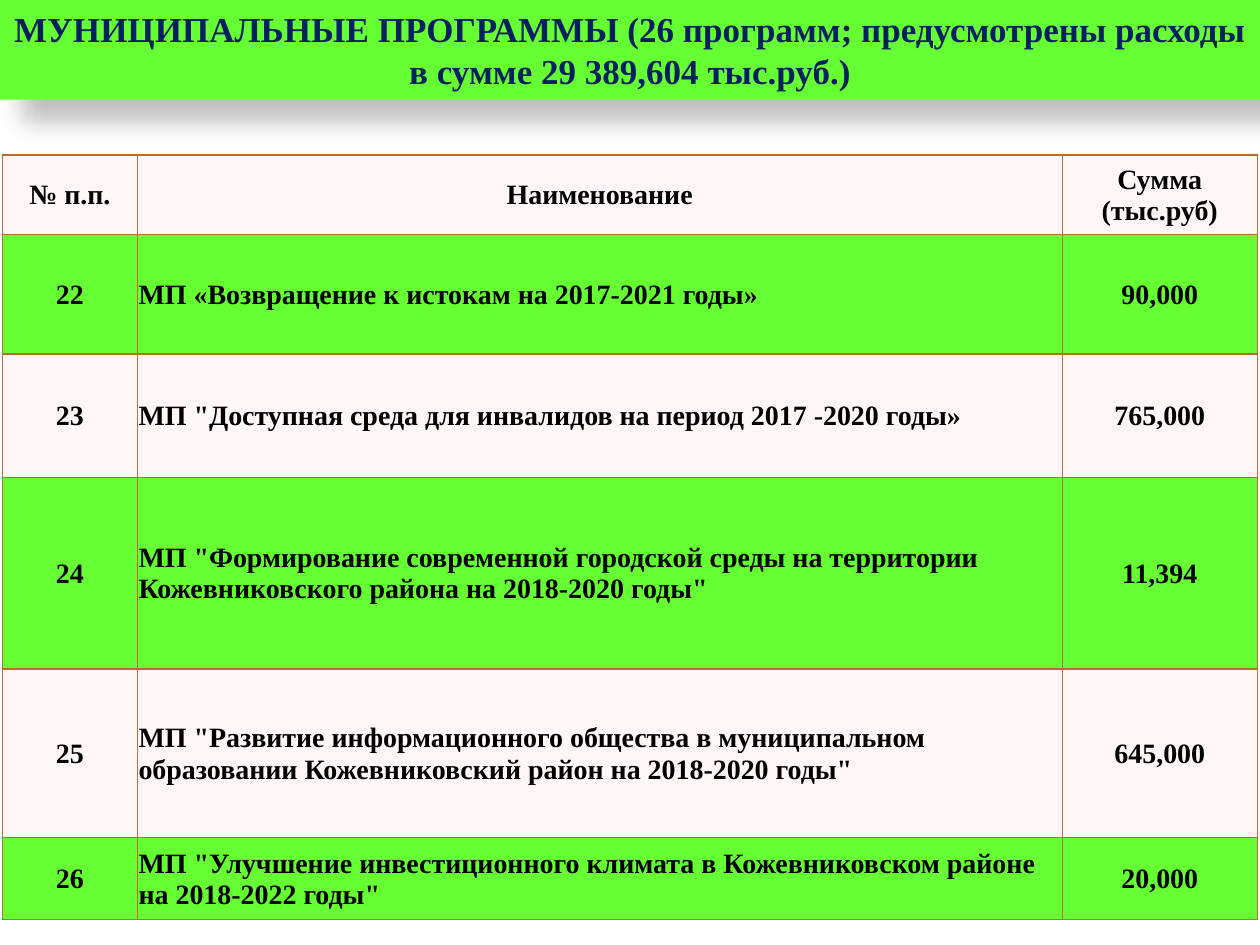
import pptx
import pptx.util
import pptx.dml.color
import pptx.enum.shapes
import pptx.enum.text
import pptx.oxml
import pptx.oxml.ns
from lxml import etree

Inches = pptx.util.Inches
Pt = pptx.util.Pt
ALIGN = pptx.enum.text.PP_ALIGN
MIDDLE = pptx.enum.text.MSO_ANCHOR.MIDDLE
COLORS = {"green": "66FF33", "pale": "FFF7F5", "border": "BA6C2C",
          "title": "002060", "text": "000000", "shadow": "000000"}
TITLE = ("МУНИЦИПАЛЬНЫЕ ПРОГРАММЫ (26 программ; предусмотрены расходы "
         "в сумме 29 389,604 тыс.руб.)")
COL_WIDTHS = [1.07, 7.34, 1.55]
ROW_HEIGHTS = [0.63, 0.95, 0.98, 1.52, 1.34, 0.65]
PROGRAMS = [
    ("№ п.п.", "Наименование", "Сумма (тыс.руб)"),
    ("22", "МП «Возвращение к истокам на 2017-2021 годы»", "90,000"),
    ("23", 'МП "Доступная среда для инвалидов на период 2017 -2020 годы»', "765,000"),
    ("24", 'МП "Формирование современной городской среды на территории '
           'Кожевниковского района на 2018-2020 годы"', "11,394"),
    ("25", 'МП "Развитие информационного общества в муниципальном '
           'образовании Кожевниковский район на 2018-2020 годы"', "645,000"),
    ("26", 'МП "Улучшение инвестиционного климата в Кожевниковском районе '
           'на 2018-2022 годы"', "20,000"),
]


def rgb(name):
    return pptx.dml.color.RGBColor.from_string(COLORS[name])


def fill(obj, color):
    obj.fill.solid()
    obj.fill.fore_color.rgb = rgb(color)


def write(tf, text, size, color, align):
    p = tf.paragraphs[0]
    p.alignment = align
    r = p.add_run()
    r.text = text
    font = {"name": "Times New Roman", "size": Pt(size), "bold": True}
    for key, value in font.items():
        setattr(r.font, key, value)
    r.font.color.rgb = rgb(color)


def add_shadow(sp):
    """Give the shape a soft shadow to the lower right."""
    sp.shadow.inherit = False
    effects = sp._element.spPr.find(pptx.oxml.ns.qn("a:effectLst"))
    effects.append(pptx.oxml.parse_xml(
        f'<a:outerShdw {pptx.oxml.ns.nsdecls("a")} blurRad="{Pt(15)}" dist="{Pt(18)}" '
        f'dir="2700000" algn="tl" rotWithShape="0"><a:srgbClr val="{COLORS["shadow"]}">'
        '<a:alpha val="26000"/></a:srgbClr></a:outerShdw>'))


def add_title(s):
    sp = s.shapes.add_shape(pptx.enum.shapes.MSO_SHAPE.RECTANGLE,
                            0, 0, Inches(10), Inches(0.79))
    fill(sp, "green")
    sp.line.fill.background()
    add_shadow(sp)
    sp.text_frame.word_wrap = True
    sp.text_frame.vertical_anchor = MIDDLE
    write(sp.text_frame, TITLE, 20, "title", ALIGN.CENTER)


def add_borders(cell):
    tc_pr = cell._tc.get_or_add_tcPr()
    for i, side in enumerate(("lnL", "lnR", "lnT", "lnB")):
        ln = etree.Element(pptx.oxml.ns.qn(f"a:{side}"), w=str(Pt(0.75)))
        solid = etree.SubElement(ln, pptx.oxml.ns.qn("a:solidFill"))
        etree.SubElement(solid, pptx.oxml.ns.qn("a:srgbClr"), val=COLORS["border"])
        tc_pr.insert(i, ln)


def add_program_table(s):
    table = s.shapes.add_table(len(PROGRAMS), len(COL_WIDTHS), Inches(0.02), Inches(1.23),
                               Inches(sum(COL_WIDTHS)), Inches(sum(ROW_HEIGHTS))).table
    for col, width in zip(table.columns, COL_WIDTHS):
        col.width = Inches(width)
    for row, height in zip(table.rows, ROW_HEIGHTS):
        row.height = Inches(height)
    layout = {"vertical_anchor": MIDDLE, "margin_left": Inches(0.01),
              "margin_right": Inches(0.01), "margin_top": Inches(0.01), "margin_bottom": 0}
    for i, values in enumerate(PROGRAMS):
        for j, text in enumerate(values):
            cell = table.cell(i, j)
            for key, value in layout.items():
                setattr(cell, key, value)
            fill(cell, "green" if i % 2 else "pale")
            add_borders(cell)
            is_name = i > 0 and j == 1
            write(cell.text_frame, text, 16, "text", ALIGN.LEFT if is_name else ALIGN.CENTER)


def main():
    prs = pptx.Presentation()
    prs.slide_width, prs.slide_height = Inches(10), Inches(7.5)
    s = prs.slides.add_slide(prs.slide_layouts[6])
    add_program_table(s)
    add_title(s)
    prs.save("out.pptx")


if __name__ == "__main__":
    main()
